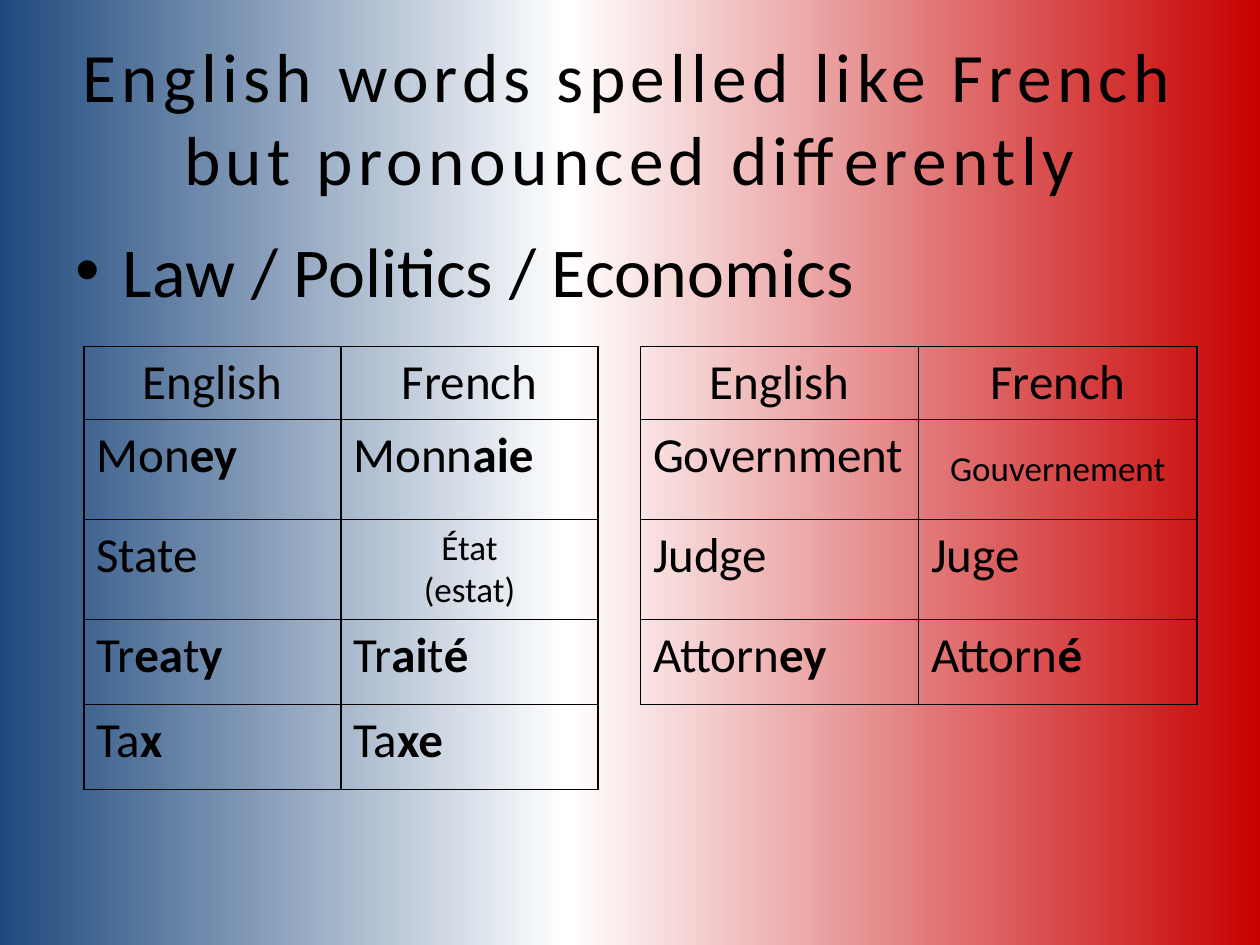
from lxml.etree import SubElement
from pptx import Presentation
from pptx.dml.color import RGBColor
from pptx.enum.text import MSO_ANCHOR, MSO_AUTO_SIZE, PP_ALIGN
from pptx.oxml.ns import qn
from pptx.util import Cm, Pt

BLACK = RGBColor(0x00, 0x00, 0x00)
BLUE = RGBColor(0x1F, 0x49, 0x7D)
WHITE = RGBColor(0xFF, 0xFF, 0xFF)
RED = RGBColor(0xC8, 0x00, 0x00)
FLAG_STOPS = [(0, BLUE, 55), (45, WHITE, 60), (100, RED, 55)]
FONT = "Calibri"
HEADINGS = ("English", "French")
HEADING_HEIGHT, TALL, SHORT = 1.42, 2.02, 1.71

# Asterisks enclose the letters set in bold.
LEFT_WORDS = [
    ("Mon*ey*", "Monn*aie*", TALL),
    ("State", "État\n(estat)", TALL),
    ("Tr*ea*t*y*", "Tr*ai*t*é*", SHORT),
    ("Ta*x*", "Ta*xe*", SHORT),
]
RIGHT_WORDS = [
    ("Government", "Gouvernement", TALL),
    ("Judge", "Juge", TALL),
    ("Attorn*ey*", "Attorn*é*", SHORT),
]


def style(run, size, bold=False):
    run.font.name = FONT
    run.font.size = Pt(size)
    run.font.bold = bold
    run.font.color.rgb = BLACK


def add_color(parent, color, alpha=100):
    srgb = SubElement(parent, qn("a:srgbClr"), val=str(color))
    if alpha < 100:
        SubElement(srgb, qn("a:alpha"), val=str(alpha * 1000))


def paint_background(slide):
    fill = slide.background.fill
    fill.gradient()
    fill.gradient_angle = 0
    stops = slide.background._cSld.find(".//" + qn("a:gsLst"))
    for stop in list(stops):
        stops.remove(stop)
    for position, color, alpha in FLAG_STOPS:
        stop = SubElement(stops, qn("a:gs"), pos=str(position * 1000))
        add_color(stop, color, alpha)


def fill_placeholder(placeholder, text, size, left, top, width, height):
    placeholder.left, placeholder.top = Cm(left), Cm(top)
    placeholder.width, placeholder.height = Cm(width), Cm(height)
    frame = placeholder.text_frame
    frame.text = text
    frame.auto_size = MSO_AUTO_SIZE.NONE
    run = frame.paragraphs[0].runs[0]
    style(run, size)
    return run


def border(cell):
    properties = cell._tc.get_or_add_tcPr()
    for side in ("lnL", "lnR", "lnT", "lnB"):
        line = SubElement(properties, qn(f"a:{side}"), w=str(Pt(1)))
        add_color(SubElement(line, qn("a:solidFill")), BLACK)


def fill_cell(cell, marked_text, size=28, centered=False):
    border(cell)
    cell.fill.background()
    frame = cell.text_frame
    frame.text = marked_text.replace("*", "")
    for paragraph, line in zip(frame.paragraphs, marked_text.split("\n")):
        paragraph.alignment = PP_ALIGN.CENTER if centered else PP_ALIGN.LEFT
        pieces = line.split("*")
        paragraph.text = pieces[0]
        style(paragraph.runs[0], size)
        for index, piece in enumerate(pieces[1:], start=1):
            if piece:
                run = paragraph.add_run()
                run.text = piece
                style(run, size, bold=index % 2 == 1)


def add_word_table(slide, words, left, top, width):
    heights = [HEADING_HEIGHT] + [height for _, _, height in words]
    table = slide.shapes.add_table(
        len(heights), 2, Cm(left), Cm(top), Cm(width), Cm(sum(heights))
    ).table
    table.first_row = table.horz_banding = False
    for column in table.columns:
        column.width = Cm(width / 2)
    for row, height in zip(table.rows, heights):
        row.height = Cm(height)
    for column, heading in enumerate(HEADINGS):
        fill_cell(table.cell(0, column), heading, centered=True)
    for row, (english, french, _) in enumerate(words, start=1):
        fill_cell(table.cell(row, 0), english)
        long_word = len(french) > 11
        fill_cell(table.cell(row, 1), french, 20 if long_word else 28, long_word)
        if long_word:
            table.cell(row, 1).vertical_anchor = MSO_ANCHOR.MIDDLE


def main():
    deck = Presentation()
    deck.slide_width, deck.slide_height = Cm(25.4), Cm(19.05)
    slide = deck.slides.add_slide(deck.slide_layouts[1])
    paint_background(slide)
    title = fill_placeholder(
        slide.shapes.title,
        "English words spelled like French but pronounced differently",
        39.6, 1.27, 0.76, 22.86, 3.18,
    )
    title.font._element.set("spc", "300")
    fill_placeholder(
        slide.placeholders[1], "Law / Politics / Economics",
        40, 1.27, 4.45, 22.86, 12.57,
    )
    add_word_table(slide, LEFT_WORDS, 1.69, 6.99, 10.37)
    add_word_table(slide, RIGHT_WORDS, 12.91, 6.99, 11.22)
    deck.save("out.pptx")


if __name__ == "__main__":
    main()
